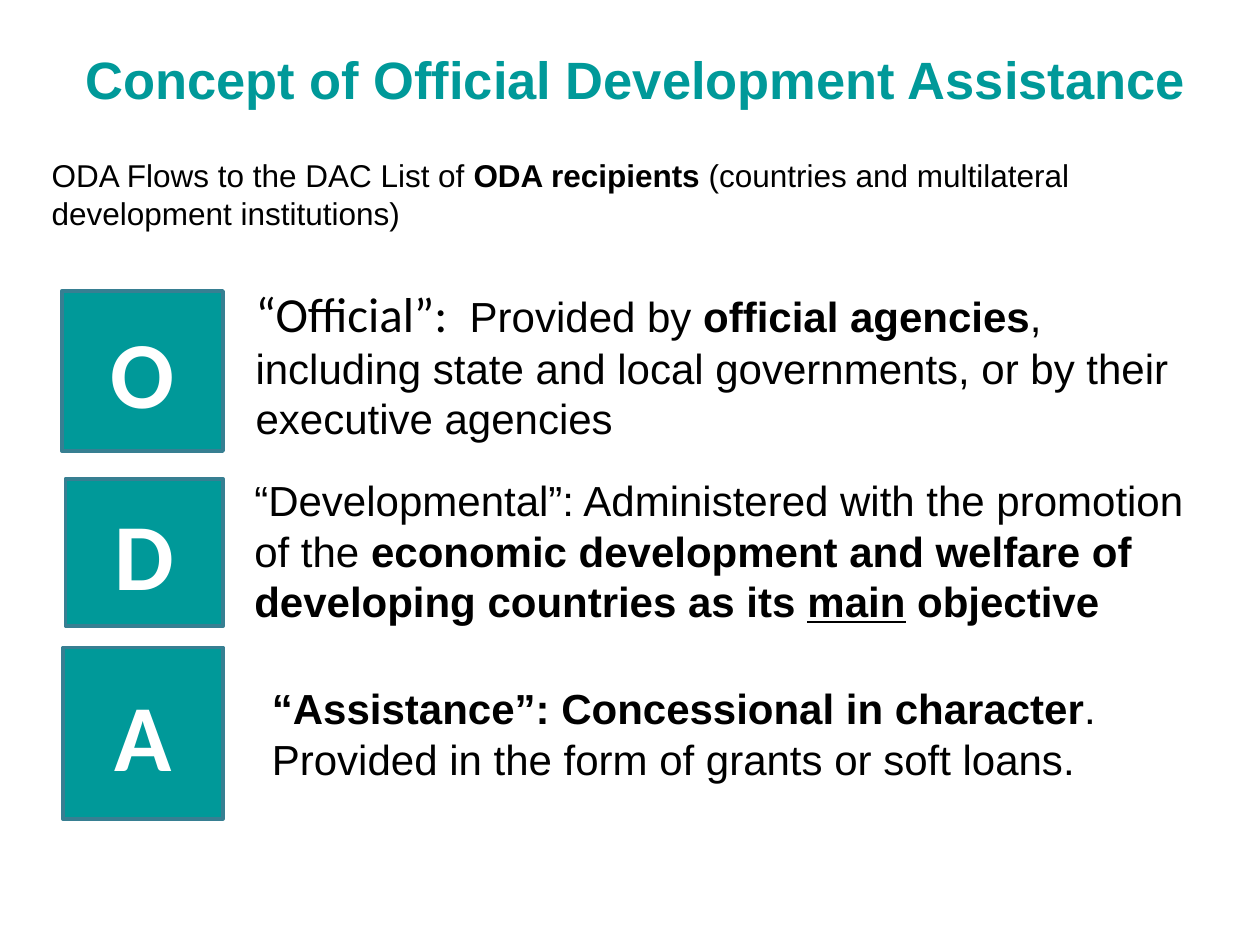
import pptx
import pptx.dml.color
import pptx.enum.shapes
import pptx.enum.text
import pptx.oxml.ns
import pptx.util
from lxml import etree

Inches = pptx.util.Inches
Pt = pptx.util.Pt
ALIGN = pptx.enum.text.PP_ALIGN
ANCHOR = pptx.enum.text.MSO_ANCHOR

TEAL = pptx.dml.color.RGBColor(0x00, 0x99, 0x99)
EDGE = pptx.dml.color.RGBColor(0x37, 0x7F, 0x92)
BLACK = pptx.dml.color.RGBColor(0, 0, 0)
WHITE = pptx.dml.color.RGBColor(255, 255, 255)

BOLD, UNDERLINED = "bold", "underlined"

INTRO = [
    ("ODA Flows to the DAC List of ",),
    ("ODA recipients ", BOLD),
    ("(countries and multilateral development institutions)",),
]
# letter, tile area, definition area, definition, size of its first run, font of its first run
LETTERS = [
    ("O", (0.49, 2.31, 1.28, 1.27), (1.93, 2.2, 7.58, 1.38), [
        ("“Official”:  ",),
        ("Provided by ",),
        ("official agencies", BOLD),
        (", including state and local governments, or by their executive agencies",),
    ], 28, "Calibri"),
    ("D", (0.52, 3.8, 1.25, 1.17), (1.92, 3.72, 7.58, 1.31), [
        ("“Developmental”: Administered with the promotion of the ",),
        ("economic development and welfare of developing countries as its ", BOLD),
        ("main", BOLD, UNDERLINED),
        (" objective", BOLD),
    ], 24, "Arial"),
    ("A", (0.5, 5.14, 1.27, 1.36), (2.06, 5.37, 7.44, 0.91), [
        ("“Assistance”: Concessional in character", BOLD),
        (". Provided in the form of grants or soft loans.",),
    ], 24, "Arial"),
]


def place(shape, area):
    shape.left, shape.top, shape.width, shape.height = map(Inches, area)


def style(font, size, color, name="Arial", bold=False):
    font.size, font.name, font.bold = Pt(size), name, bold
    font.color.rgb = color


def write_runs(paragraph, pieces, size):
    for words, *marks in pieces:
        run = paragraph.add_run()
        run.text = words
        style(run.font, size, BLACK, bold=BOLD in marks)
        if UNDERLINED in marks:
            run.font.underline = True


def fill_title(title):
    place(title, (0.31, 0.32, 9.47, 0.61))
    title.text_frame.text = "Concept of Official Development Assistance"
    heading = title.text_frame.paragraphs[0]
    heading.alignment = ALIGN.CENTER
    style(heading.runs[0].font, 30, TEAL, bold=True)


def fill_intro(body):
    place(body, (0.31, 1.19, 9.2, 0.71))
    intro = body.text_frame.paragraphs[0]
    properties = intro._p.get_or_add_pPr()
    properties.set("marL", "0")
    properties.set("indent", "0")
    etree.SubElement(properties, pptx.oxml.ns.qn("a:buNone"))
    intro.space_before = Pt(0)
    write_runs(intro, INTRO, 18)


def add_letter_tile(slide, letter, area):
    tile = slide.shapes.add_shape(
        pptx.enum.shapes.MSO_SHAPE.RECTANGLE, *map(Inches, area))
    tile.shadow.inherit = False
    tile.fill.solid()
    tile.fill.fore_color.rgb = TEAL
    tile.line.color.rgb = EDGE
    tile.line.width = Pt(2)
    tile.text_frame.text = letter
    tile.text_frame.vertical_anchor = ANCHOR.MIDDLE
    caption = tile.text_frame.paragraphs[0]
    caption.alignment = ALIGN.CENTER
    style(caption.runs[0].font, 54, WHITE, "Calibri", bold=True)


def add_definition(slide, area, pieces, lead_size, lead_font):
    frame = slide.shapes.add_textbox(*map(Inches, area)).text_frame
    frame.word_wrap = True
    definition = frame.paragraphs[0]
    write_runs(definition, pieces, 24)
    lead = definition.runs[0].font
    lead.size, lead.name = Pt(lead_size), lead_font


def main():
    deck = pptx.Presentation()
    deck.slide_width, deck.slide_height = Inches(10), Inches(7.5)
    slide = deck.slides.add_slide(deck.slide_layouts[1])
    fill_title(slide.shapes.title)
    fill_intro(slide.placeholders[1])
    for letter, tile_area, text_area, pieces, lead_size, lead_font in LETTERS:
        add_letter_tile(slide, letter, tile_area)
        add_definition(slide, text_area, pieces, lead_size, lead_font)
    deck.save("out.pptx")


if __name__ == "__main__":
    main()
